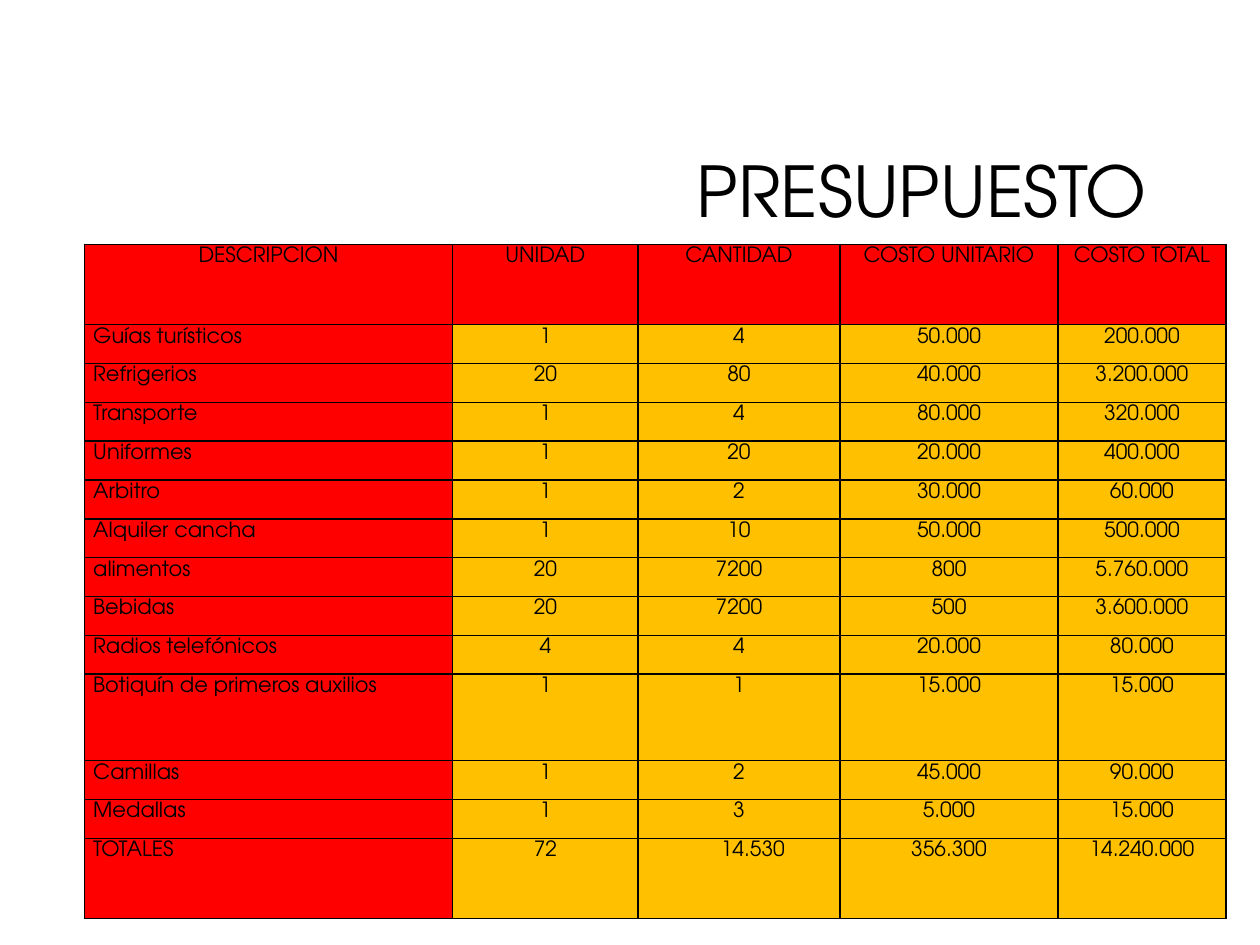
from dataclasses import dataclass

from lxml.etree import SubElement
from pptx import Presentation
from pptx.dml.color import RGBColor
from pptx.enum.text import MSO_ANCHOR, MSO_AUTO_SIZE, PP_ALIGN
from pptx.oxml.ns import qn
from pptx.util import Inches, Pt


@dataclass(frozen=True)
class Theme:
    font: str = "TeX Gyre Adventor"
    ink: str = "000000"
    label_fill: str = "FF0000"
    value_fill: str = "FFC000"
    title_size: float = 40
    table_size: float = 12
    border_width: float = 1


THEME = Theme()

COLUMN_WIDTHS = (2.92, 1.47, 1.6, 1.73, 1.33)
NORMAL_HEIGHT = 0.31
TALL_HEIGHTS = {"DESCRIPCION": 0.64, "Botiquín de primeros auxilios": 0.69, "TOTALES": 0.64}

BUDGET = (
    ("DESCRIPCION", "UNIDAD", "CANTIDAD", "COSTO UNITARIO", "COSTO TOTAL"),
    ("Guías turísticos", "1", "4", "50.000", "200.000"),
    ("Refrigerios", "20", "80", "40.000", "3.200.000"),
    ("Transporte", "1", "4", "80.000", "320.000"),
    ("Uniformes", "1", "20", "20.000", "400.000"),
    ("Arbitro", "1", "2", "30.000", "60.000"),
    ("Alquiler cancha", "1", "10", "50.000", "500.000"),
    ("alimentos", "20", "7200", "800", "5.760.000"),
    ("Bebidas", "20", "7200", "500", "3.600.000"),
    ("Radios telefónicos", "4", "4", "20.000", "80.000"),
    ("Botiquín de primeros auxilios", "1", "1", "15.000", "15.000"),
    ("Camillas", "1", "2", "45.000", "90.000"),
    ("Medallas", "1", "3", "5.000", "15.000"),
    ("TOTALES", "72", "14.530", "356.300", "14.240.000"),
)


def write_text(frame, text, *, size, align, line_spacing, space_after=0, indent=0):
    para = frame.paragraphs[0]
    para.alignment = align
    para.line_spacing = line_spacing
    para.space_before = Pt(0)
    para.space_after = Pt(space_after)
    if indent:
        para._p.get_or_add_pPr().set("marL", str(Inches(indent)))
    span = para.add_run()
    span.text = text
    span.font.name = THEME.font
    span.font.size = Pt(size)
    span.font.color.rgb = RGBColor.from_string(THEME.ink)


def add_borders(cell):
    properties = cell._tc.get_or_add_tcPr()
    for side in ("a:lnL", "a:lnR", "a:lnT", "a:lnB"):
        line = SubElement(properties, qn(side), w=str(Pt(THEME.border_width)))
        fill = SubElement(line, qn("a:solidFill"))
        SubElement(fill, qn("a:srgbClr"), val=THEME.ink)


def format_cell(cell, color):
    cell.margin_left = cell.margin_right = Inches(0.07)
    cell.margin_top = cell.margin_bottom = 0
    cell.vertical_anchor = MSO_ANCHOR.TOP
    add_borders(cell)
    cell.fill.solid()
    cell.fill.fore_color.rgb = RGBColor.from_string(color)


def place_title(page, left, top, width, height):
    title = page.shapes.title
    title.left, title.top = Inches(left), Inches(top)
    title.width, title.height = Inches(width), Inches(height)
    frame = title.text_frame
    frame.auto_size = MSO_AUTO_SIZE.NONE
    frame.word_wrap = True
    frame.vertical_anchor = MSO_ANCHOR.MIDDLE
    write_text(frame, "PRESUPUESTO ", size=THEME.title_size,
               align=PP_ALIGN.RIGHT, line_spacing=0.9)


def place_budget(page, left, top, width, height):
    table = page.shapes.add_table(len(BUDGET), len(COLUMN_WIDTHS), Inches(left),
                                  Inches(top), Inches(width), Inches(height)).table
    table.first_row = table.horz_banding = False
    for column, share in zip(table.columns, COLUMN_WIDTHS):
        column.width = Inches(width * share / sum(COLUMN_WIDTHS))

    heights = [TALL_HEIGHTS.get(entries[0], NORMAL_HEIGHT) for entries in BUDGET]
    for row_index, entries in enumerate(BUDGET):
        table.rows[row_index].height = Inches(height * heights[row_index] / sum(heights))
        for column_index, text in enumerate(entries):
            is_header = row_index == 0
            is_label = column_index == 0
            is_total_quantity = entries[0] == "TOTALES" and column_index == 2
            cell = table.cell(row_index, column_index)
            format_cell(cell, THEME.label_fill if is_header or is_label else THEME.value_fill)
            write_text(cell.text_frame, text, size=THEME.table_size,
                       align=PP_ALIGN.LEFT if is_label and not is_header else PP_ALIGN.CENTER,
                       line_spacing=1.15, space_after=10,
                       indent=0.22 if is_total_quantity else 0)


def main():
    deck = Presentation()
    deck.slide_width, deck.slide_height = Inches(10), Inches(7.5)
    page = deck.slides.add_slide(deck.slide_layouts.get_by_name("Title Only"))
    place_title(page, 2.38, 0.84, 6.97, 1.41)
    place_budget(page, 0.67, 1.94, 9.06, 5.35)
    deck.save("out.pptx")


if __name__ == "__main__":
    main()
